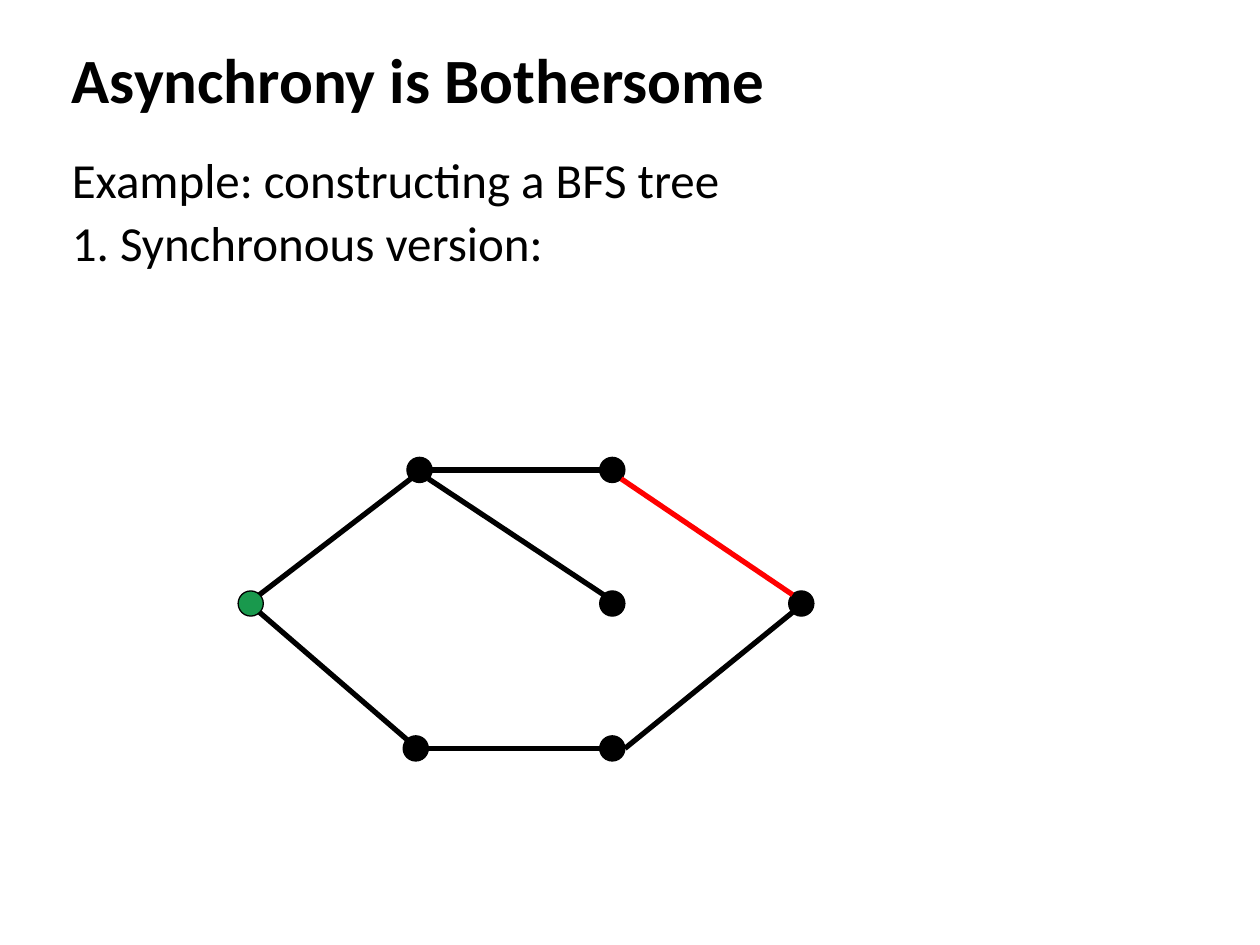
from dataclasses import dataclass

from lxml import etree
from pptx import Presentation
from pptx.dml.color import RGBColor
from pptx.enum.shapes import MSO_CONNECTOR, MSO_SHAPE
from pptx.enum.text import MSO_ANCHOR, MSO_AUTO_SIZE, PP_ALIGN
from pptx.oxml.ns import qn
from pptx.util import Inches, Pt

ELLIPSE = MSO_SHAPE.OVAL
STRAIGHT = MSO_CONNECTOR.STRAIGHT
LEFT_ALIGN = PP_ALIGN.LEFT
TOP, MIDDLE = MSO_ANCHOR.TOP, MSO_ANCHOR.MIDDLE
NO_AUTOFIT = MSO_AUTO_SIZE.NONE


@dataclass(frozen=True)
class Theme:
    font: str = "Calibri"
    title_size: Pt = Pt(36)
    body_size: Pt = Pt(28)
    black: RGBColor = RGBColor(0x00, 0x00, 0x00)
    root_green: RGBColor = RGBColor(0x19, 0x99, 0x4D)
    non_tree_red: RGBColor = RGBColor(0xFF, 0x00, 0x00)
    outline_width: Pt = Pt(0.75)
    edge_width: Pt = Pt(3)


THEME = Theme()

# Graph: node centres in inches, and edges that start and end on a node's rim
RADIUS = 0.1
DIAGONAL = 0.07
RIM = {
    "left": (-RADIUS, 0),
    "right": (RADIUS, 0),
    "upper left": (-DIAGONAL, -DIAGONAL),
    "upper right": (DIAGONAL, -DIAGONAL),
    "lower left": (-DIAGONAL, DIAGONAL),
    "lower right": (DIAGONAL, DIAGONAL),
}
UPPER_Y, MIDDLE_Y, LOWER_Y = 3.73, 4.79, 5.94
INNER_X = 4.86
NODES = {
    "root": (1.99, MIDDLE_Y),
    "upper": (3.33, UPPER_Y),
    "lower": (3.3, LOWER_Y),
    "upper inner": (INNER_X, UPPER_Y),
    "lower inner": (INNER_X, LOWER_Y),
    "middle inner": (INNER_X, MIDDLE_Y),
    "far": (6.36, MIDDLE_Y),
}
TREE_EDGES = [
    ("root", "upper right", "upper", "lower left"),
    ("root", "lower right", "lower", "upper left"),
    ("upper", "right", "upper inner", "left"),
    ("upper", "lower right", "middle inner", "upper left"),
    ("lower", "right", "lower inner", "left"),
    ("lower inner", "right", "far", "lower left"),
]
NON_TREE_EDGE = ("upper inner", "lower right", "far", "upper left")


def fill_placeholder(placeholder, box, lines, size, bold, anchor):
    placeholder.left, placeholder.top, placeholder.width, placeholder.height = (
        Inches(value) for value in box
    )
    frame = placeholder.text_frame
    frame.text = "\n".join(lines)
    frame.word_wrap = True
    frame.auto_size = NO_AUTOFIT
    frame.vertical_anchor = anchor
    for paragraph in frame.paragraphs:
        paragraph.alignment = LEFT_ALIGN
        paragraph.font.name = THEME.font
        paragraph.font.size = size
        paragraph.font.bold = bold
        paragraph.font.color.rgb = THEME.black


def set_hanging_indent(paragraph, indent):
    paragraph.line_spacing = 0.9
    properties = paragraph._p.get_or_add_pPr()
    properties.set("marL", str(Inches(indent)))
    properties.set("indent", str(-Inches(indent)))
    properties.insert_element_before(
        etree.SubElement(properties, qn("a:buNone")), "a:tabLst", "a:defRPr", "a:extLst"
    )


def add_node(slide, name):
    x, y = NODES[name]
    node = slide.shapes.add_shape(
        ELLIPSE, Inches(x - RADIUS), Inches(y - RADIUS), Inches(2 * RADIUS), Inches(2 * RADIUS)
    )
    node.shadow.inherit = False
    node.fill.solid()
    node.fill.fore_color.rgb = THEME.root_green if name == "root" else THEME.black
    node.line.color.rgb = THEME.black
    node.line.width = THEME.outline_width


def rim_point(name, side):
    return [Inches(centre + offset) for centre, offset in zip(NODES[name], RIM[side])]


def add_edge(slide, edge, color):
    start, start_side, end, end_side = edge
    line = slide.shapes.add_connector(
        STRAIGHT, *rim_point(start, start_side), *rim_point(end, end_side)
    )
    line.line.color.rgb = color
    line.line.width = THEME.edge_width
    etree.SubElement(line._element.spPr, qn("a:effectLst"))


def main():
    presentation = Presentation()
    presentation.slide_width, presentation.slide_height = Inches(10), Inches(7.5)
    slide = presentation.slides.add_slide(presentation.slide_layouts[1])

    # Title and text
    fill_placeholder(slide.shapes.title, (0.47, 0.25, 9.19, 0.75),
                     ["Asynchrony is Bothersome"], THEME.title_size, True, MIDDLE)
    body = slide.placeholders[1]
    fill_placeholder(body, (0.47, 1.19, 8.82, 1.22),
                     ["Example: constructing a BFS tree", "1. Synchronous version:"],
                     THEME.body_size, False, TOP)
    for paragraph in body.text_frame.paragraphs:
        set_hanging_indent(paragraph, 0.56)

    # Graph
    for name in NODES:
        add_node(slide, name)
    for edge in TREE_EDGES:
        add_edge(slide, edge, THEME.black)
    add_edge(slide, NON_TREE_EDGE, THEME.non_tree_red)

    presentation.save("out.pptx")


if __name__ == "__main__":
    main()
